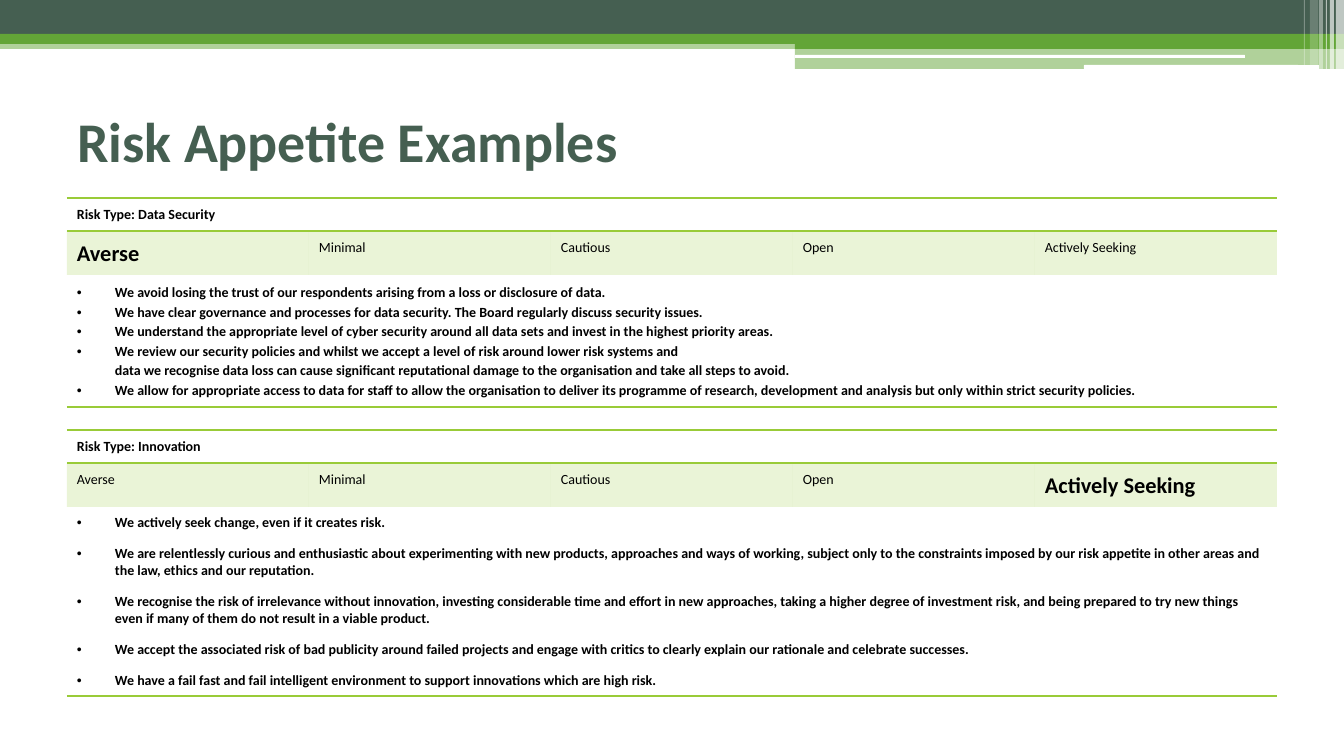
from copy import deepcopy
from dataclasses import dataclass

from lxml.etree import SubElement
from pptx import Presentation
from pptx.dml.color import RGBColor
from pptx.enum.shapes import MSO_SHAPE
from pptx.enum.text import MSO_ANCHOR, MSO_AUTO_SIZE, PP_ALIGN
from pptx.oxml.ns import qn
from pptx.util import Pt

PX = 12192000 / 1344
FONT = "Calibri"
DARK, GREEN, LIME, WHITE, BLACK = "455F51", "63A537", "99CB38", "FFFFFF", "000000"
NO_STYLE = "{2D5ABB26-0587-4C30-8999-92F81FD0307C}"
LEVELS = ["Averse", "Minimal", "Cautious", "Open", "Actively Seeking"]
LEFT, WIDTH = 67, 1210


@dataclass
class Band:
    x: int
    y: int
    w: int
    h: int
    color: str
    opacity: int = 100
    shape: MSO_SHAPE = MSO_SHAPE.RECTANGLE


@dataclass
class RiskTable:
    y: int
    risk: str
    chosen: str
    statements: list[str]
    row_heights: list[int]
    line_spacing: float
    space_after: int


BANDS = [
    Band(0, 40, 1344, 9, GREEN, 50),
    Band(0, 0, 1344, 34, DARK),
    Band(0, 34, 1344, 10, GREEN),
    Band(795, 39, 549, 10, GREEN),
    Band(795, 49, 549, 20, GREEN, 50),
    Band(795, 55, 450, 3, WHITE, shape=MSO_SHAPE.ROUNDED_RECTANGLE),
    Band(1084, 65, 235, 4, WHITE, shape=MSO_SHAPE.ROUNDED_RECTANGLE),
    Band(1336, 0, 8, 69, WHITE, 65),
    Band(1330, 0, 4, 69, WHITE, 65),
    Band(1326, 0, 1, 69, WHITE, 60),
    Band(1319, 0, 4, 69, WHITE, 40),
    Band(1310, 0, 8, 65, WHITE, 20),
    Band(1304, 0, 1, 65, WHITE, 30),
]

TABLES = [
    RiskTable(198, "Data Security", "Averse", [
        "We avoid losing the trust of our respondents arising from a loss or disclosure of data.",
        "We have clear governance and processes for data security. The Board regularly discuss "
        "security issues.",
        "We understand the appropriate level of cyber security around all data sets and invest in "
        "the highest priority areas.",
        "We review our security policies and whilst we accept a level of risk around lower risk "
        "systems and\vdata we recognise data loss can cause significant reputational damage to "
        "the organisation and take all steps to avoid.",
        "We allow for appropriate access to data for staff to allow the organisation to deliver "
        "its programme of research, development and analysis but only within strict security "
        "policies.",
    ], [33, 44, 132], 1.15, 0),
    RiskTable(430, "Innovation", "Actively Seeking", [
        "We actively seek change, even if it creates risk.",
        "We are relentlessly curious and enthusiastic about experimenting with new products, "
        "approaches and ways of working, subject only to the constraints imposed by our risk "
        "appetite in other areas and the law, ethics and our reputation.",
        "We recognise the risk of irrelevance without innovation, investing considerable time and "
        "effort in new approaches, taking a higher degree of investment risk, and being prepared "
        "to try new things even if many of them do not result in a viable product.",
        "We accept the associated risk of bad publicity around failed projects and engage with "
        "critics to clearly explain our rationale and celebrate successes.",
        "We have a fail fast and fail intelligent environment to support innovations which are "
        "high risk.",
    ], [33, 44, 189], 1.0, 10),
]


def px(n: float) -> int:
    return round(n * PX)


def rgb(color: str) -> RGBColor:
    return RGBColor.from_string(color)


def set_fill(item, props, color: str, opacity: int = 100) -> None:
    """Fill a shape or cell; props is its spPr or tcPr element."""
    item.fill.solid()
    item.fill.fore_color.rgb = rgb(color)
    if opacity < 100:
        clr = props.find(qn("a:solidFill")).find(qn("a:srgbClr"))
        SubElement(clr, qn("a:alpha"), val=str(opacity * 1000))


def format_runs(p, size: int, color: str, bold: bool) -> None:
    for r in p.runs:
        r.font.name = FONT
        r.font.size = Pt(size)
        r.font.bold = bold
        r.font.color.rgb = rgb(color)
    for br in p._p.findall(qn("a:br")):
        br.append(deepcopy(p.runs[0]._r.rPr))


def add_band(s, band: Band) -> None:
    sp = s.shapes.add_shape(band.shape, px(band.x), px(band.y), px(band.w), px(band.h))
    sp.shadow.inherit = False
    sp.line.fill.background()
    set_fill(sp, sp._element.spPr, band.color, band.opacity)


def add_border(cell, side: str) -> None:
    tc_pr = cell._tc.get_or_add_tcPr()
    ln = SubElement(tc_pr, qn(f"a:{side}"), w=str(Pt(1)))
    SubElement(SubElement(ln, qn("a:solidFill")), qn("a:srgbClr"), val=LIME)
    tc_pr.insert(0, ln)


def add_bullet(p) -> None:
    p_pr = p._p.get_or_add_pPr()
    p_pr.set("marL", str(px(38)))
    p_pr.set("indent", str(-px(38)))
    SubElement(p_pr, qn("a:buFont"), typeface="Arial")
    SubElement(p_pr, qn("a:buChar"), char="•")


def write_cell(cell, text: str, size: int = 10, bold: bool = True) -> None:
    p = cell.text_frame.paragraphs[0]
    p.text = text
    p.line_spacing = 1.07
    p.space_before = Pt(7.5)
    format_runs(p, size, BLACK, bold)


def write_statements(cell, spec: RiskTable) -> None:
    tf = cell.text_frame
    last = len(spec.statements) - 1
    for i, statement in enumerate(spec.statements):
        p = tf.add_paragraph() if i else tf.paragraphs[0]
        p.text = statement
        p.line_spacing = spec.line_spacing
        p.space_before = Pt(0 if i else 7.5)
        p.space_after = Pt(spec.space_after if i < last else 0)
        add_bullet(p)
        format_runs(p, 10, BLACK, True)


def add_risk_table(s, spec: RiskTable) -> None:
    frame = s.shapes.add_table(3, len(LEVELS), px(LEFT), px(spec.y), px(WIDTH),
                               px(sum(spec.row_heights)))
    table = frame.table
    table.first_row = table.horz_banding = False
    table._tbl.tblPr.find(qn("a:tableStyleId")).text = NO_STYLE
    for row, height in zip(table.rows, spec.row_heights):
        row.height = px(height)
    for cell in table.iter_cells():
        cell.margin_left = cell.margin_right = px(10)
        cell.margin_top = cell.margin_bottom = px(7)
        cell.fill.background()
    for col, level in enumerate(LEVELS):
        head, choice, body = (table.cell(row, col) for row in range(3))
        chosen = level == spec.chosen
        write_cell(choice, level, 16 if chosen else 10, chosen)
        set_fill(choice, choice._tc.tcPr, LIME, 20)
        add_border(head, "lnB")
        add_border(head, "lnT")
        add_border(body, "lnB")
    for row in (0, 2):
        table.cell(row, 0).merge(table.cell(row, len(LEVELS) - 1))
    write_cell(table.cell(0, 0), f"Risk Type: {spec.risk}")
    write_statements(table.cell(2, 0), spec)


def add_title(s, text: str) -> None:
    title = s.shapes.title
    title.left, title.top, title.width, title.height = px(LEFT), px(81), px(WIDTH), px(118)
    tf = title.text_frame
    tf.text = text
    tf.auto_size = MSO_AUTO_SIZE.NONE
    tf.vertical_anchor = MSO_ANCHOR.MIDDLE
    p = tf.paragraphs[0]
    p.alignment = PP_ALIGN.LEFT
    format_runs(p, 40, DARK, True)


def main() -> None:
    prs = Presentation()
    prs.slide_width, prs.slide_height = px(1344), px(756)
    s = prs.slides.add_slide(prs.slide_layouts[5])
    for band in BANDS:
        add_band(s, band)
    add_title(s, "Risk Appetite Examples")
    for spec in TABLES:
        add_risk_table(s, spec)
    prs.save("out.pptx")


if __name__ == "__main__":
    main()
